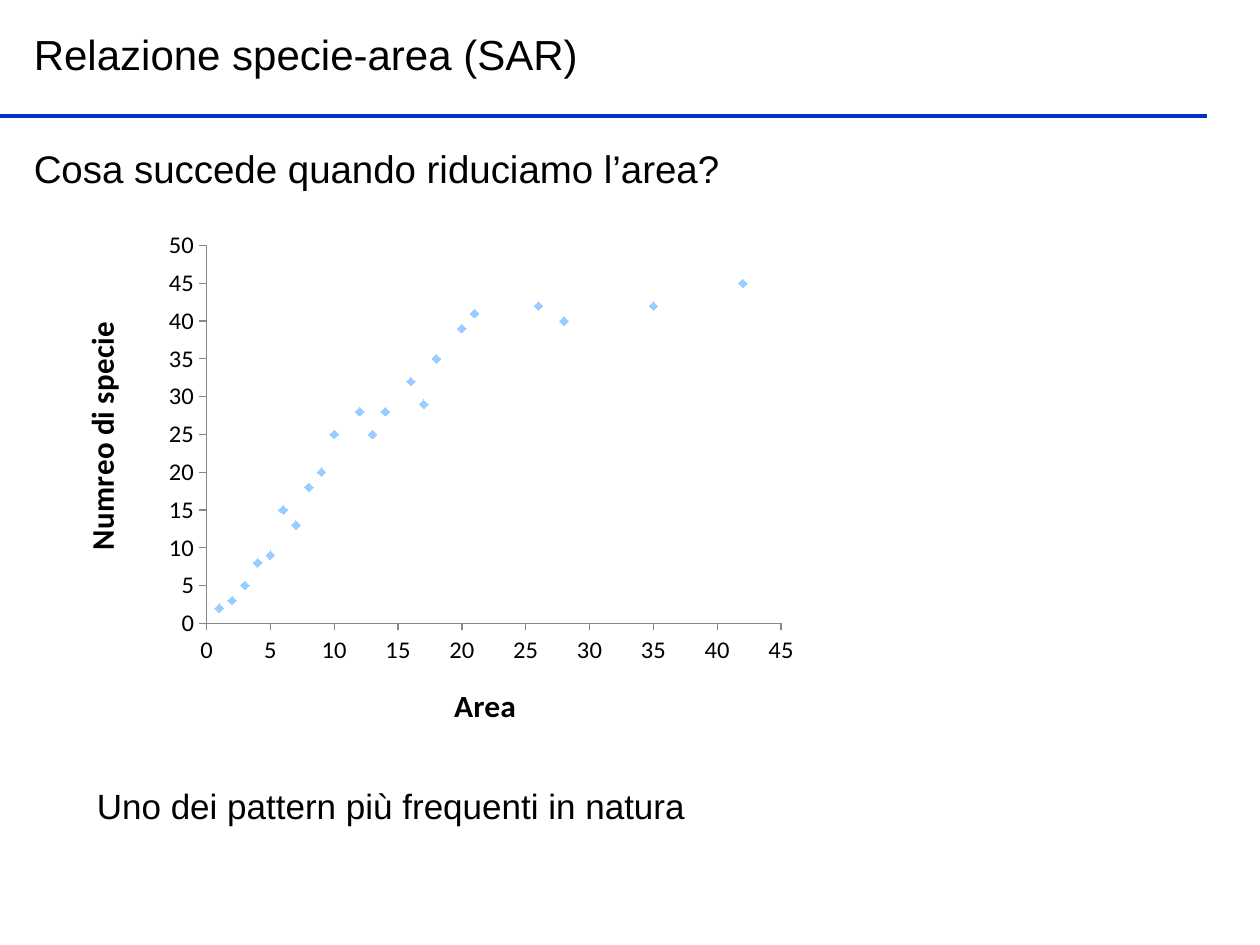
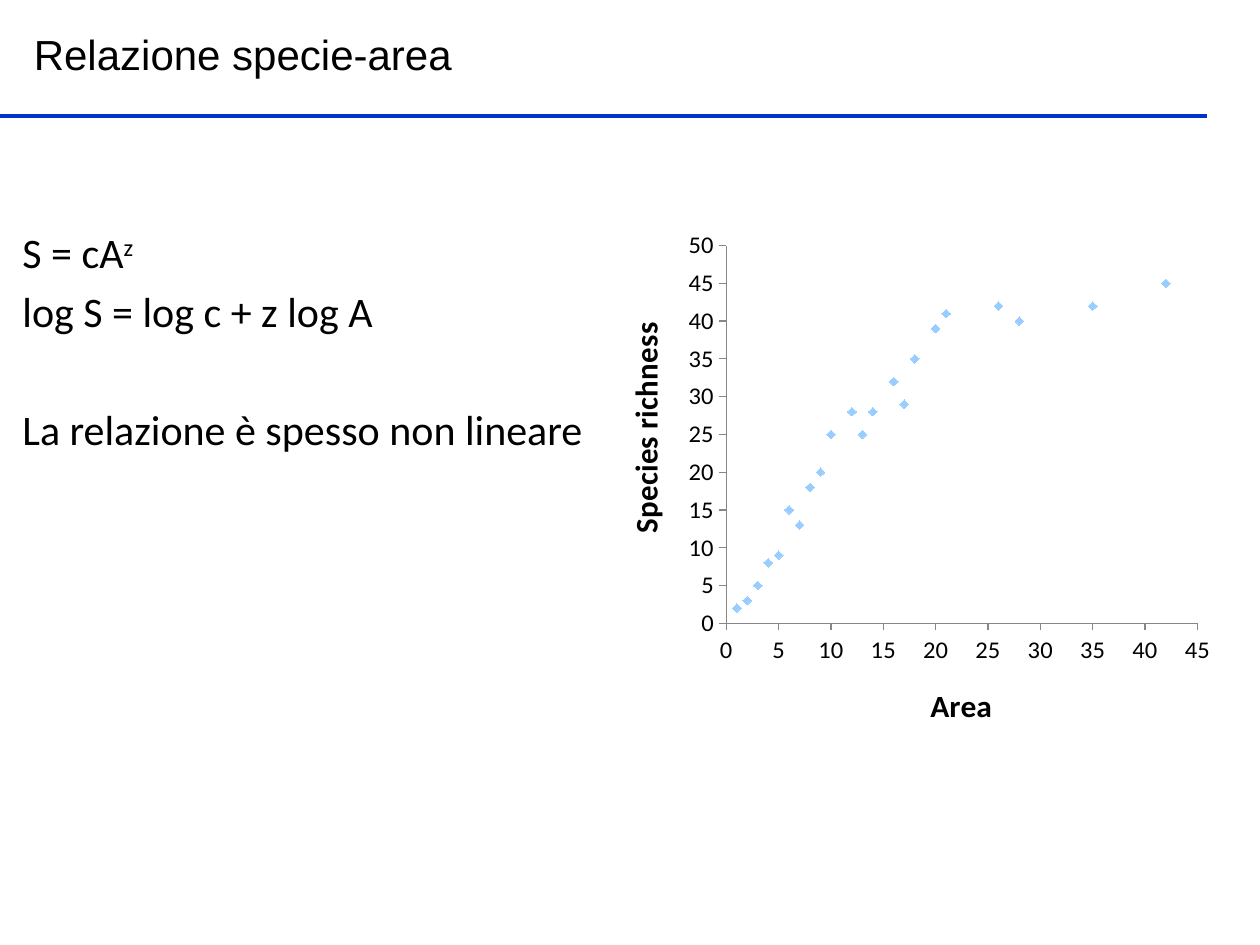
from lxml import etree
from pptx import Presentation
from pptx.chart.data import XyChartData
from pptx.dml.color import RGBColor
from pptx.enum.chart import XL_CHART_TYPE, XL_MARKER_STYLE, XL_TICK_MARK
from pptx.enum.shapes import MSO_CONNECTOR
from pptx.enum.text import MSO_ANCHOR
from pptx.oxml.ns import qn
from pptx.util import Inches, Pt

SCATTER = XL_CHART_TYPE.XY_SCATTER
DIAMOND = XL_MARKER_STYLE.DIAMOND
STRAIGHT = MSO_CONNECTOR.STRAIGHT
TOP, MIDDLE = MSO_ANCHOR.TOP, MSO_ANCHOR.MIDDLE
TICK_OUTSIDE, TICK_NONE = XL_TICK_MARK.OUTSIDE, XL_TICK_MARK.NONE

COLORS = {"text": "000000", "rule": "0332C9", "marker": "99CCFF", "axis": "878787"}
COLORS = {name: RGBColor.from_string(value) for name, value in COLORS.items()}

AREAS = [1, 2, 3, 4, 5, 6, 7, 8, 9, 10, 12, 13, 14, 16, 17, 18, 20, 21, 26, 28, 35, 42]
SPECIES = [2, 3, 5, 8, 9, 15, 13, 18, 20, 25, 28, 25, 28, 32, 29, 35, 39, 41, 42, 40, 42, 45]

SLIDES = [
    {"title": "Relazione specie-area (SAR)", "species_title": "Numreo di specie",
     "chart_left": 0.5, "chart_width": 6},
    {"title": "Relazione specie-area", "species_title": "Species richness",
     "chart_left": 4.83, "chart_width": 4.92},
]


def add_text(slide, paragraphs, box, size=24, font="Arial", anchor=MIDDLE, spacing=()):
    """Each paragraph is a (text, superscript) pair; spacing is points before each."""
    frame = slide.shapes.add_textbox(*map(Inches, box)).text_frame
    frame.word_wrap = True
    frame.vertical_anchor = anchor
    for index, parts in enumerate(paragraphs):
        paragraph = frame.paragraphs[0] if index == 0 else frame.add_paragraph()
        if spacing:
            paragraph.space_before = Pt(spacing[index])
        for text, baseline in zip(parts, (0, 30000)):
            if not text:
                continue
            run = paragraph.add_run()
            run.text = text
            run.font.size = Pt(size)
            run.font.name = font
            run.font.color.rgb = COLORS["text"]
            if baseline:
                run.font._element.set("baseline", str(baseline))


def set_layout(element, index, target=None, **fractions):
    """Place a chart part by fractions of the chart; index is the layout's child position."""
    for old in element.findall(qn("c:layout")):
        element.remove(old)
    layout = etree.Element(qn("c:layout"))
    manual = etree.SubElement(layout, qn("c:manualLayout"))
    if target:
        etree.SubElement(manual, qn("c:layoutTarget")).set("val", target)
    for mode in ("xMode", "yMode"):
        etree.SubElement(manual, qn(f"c:{mode}")).set("val", "edge")
    for name, value in fractions.items():
        etree.SubElement(manual, qn(f"c:{name}")).set("val", str(value))
    element.insert(index, layout)


prs = Presentation()
prs.slide_width, prs.slide_height = Inches(10), Inches(7.5)
blank = prs.slide_layouts[6]

for content in SLIDES:
    slide = prs.slides.add_slide(blank)

    # Shared header
    rule = slide.shapes.add_connector(STRAIGHT, 0, Inches(0.92), Inches(9.58), Inches(0.92))
    rule.line.color.rgb = COLORS["rule"]
    rule.line.width = Pt(2)
    etree.SubElement(rule._element.spPr, qn("a:effectLst"))
    add_text(slide, [(content["title"], "")], (0.17, 0.18, 8.5, 0.5))

    # Species-area scatter chart
    data = XyChartData()
    points = data.add_series("Series 1")
    for area, species in zip(AREAS, SPECIES):
        points.add_data_point(area, species)
    chart = slide.shapes.add_chart(
        SCATTER, Inches(content["chart_left"]), Inches(1.75),
        Inches(content["chart_width"]), Inches(4.08), data).chart
    chart.has_legend = False
    chart.has_title = False
    chart.font.size = Pt(14)
    chart.font.name = "Calibri"
    chart.font.color.rgb = COLORS["text"]
    plot = chart.plots[0]
    plot.vary_by_categories = False
    series = plot.series[0]
    series.smooth = False
    series.format.line.fill.background()
    series.marker.style = DIAMOND
    series.marker.size = 5
    series.marker.format.fill.solid()
    series.marker.format.fill.fore_color.rgb = COLORS["marker"]
    series.marker.format.line.fill.background()
    set_layout(chart._chartSpace.chart.plotArea, 0, "inner", x=0.19, y=0.05, w=0.76, h=0.75)

    for axis, title, maximum, rotation, left, top in (
            (chart.category_axis, "Area", 45, 0, 0.51, 0.91),
            (chart.value_axis, content["species_title"], 50, -5400000, 0.015, 0.2)):
        axis.minimum_scale, axis.maximum_scale, axis.major_unit = 0, maximum, 5
        axis.has_major_gridlines = False
        axis.major_tick_mark, axis.minor_tick_mark = TICK_OUTSIDE, TICK_NONE
        axis.format.line.color.rgb = COLORS["axis"]
        axis.format.line.width = Pt(0.75)
        frame = axis.axis_title.text_frame
        frame.text = title
        frame._txBody.bodyPr.set("rot", str(rotation))
        font = frame.paragraphs[0].runs[0].font
        font.size, font.bold, font.name = Pt(18), True, "Calibri"
        font.color.rgb = COLORS["text"]
        set_layout(axis.axis_title._element, 1, x=left, y=top)

sar_slide, formula_slide = prs.slides
add_text(sar_slide, [("Uno dei pattern più frequenti in natura", "")],
         (0.67, 6.17, 6.67, 0.44), size=20)
add_text(sar_slide, [("Cosa succede quando riduciamo l’area?", "")],
         (0.17, 1.1, 8.5, 0.47), size=22)
add_text(formula_slide,
         [("S = cA", "z"), ("log S = log c + z log A", ""),
          ("La relazione è spesso non lineare", "")],
         (0.08, 1.75, 4.67, 2.25), font="Calibri", anchor=TOP, spacing=(4.8, 4.8, 38.5))

prs.save("out.pptx")
